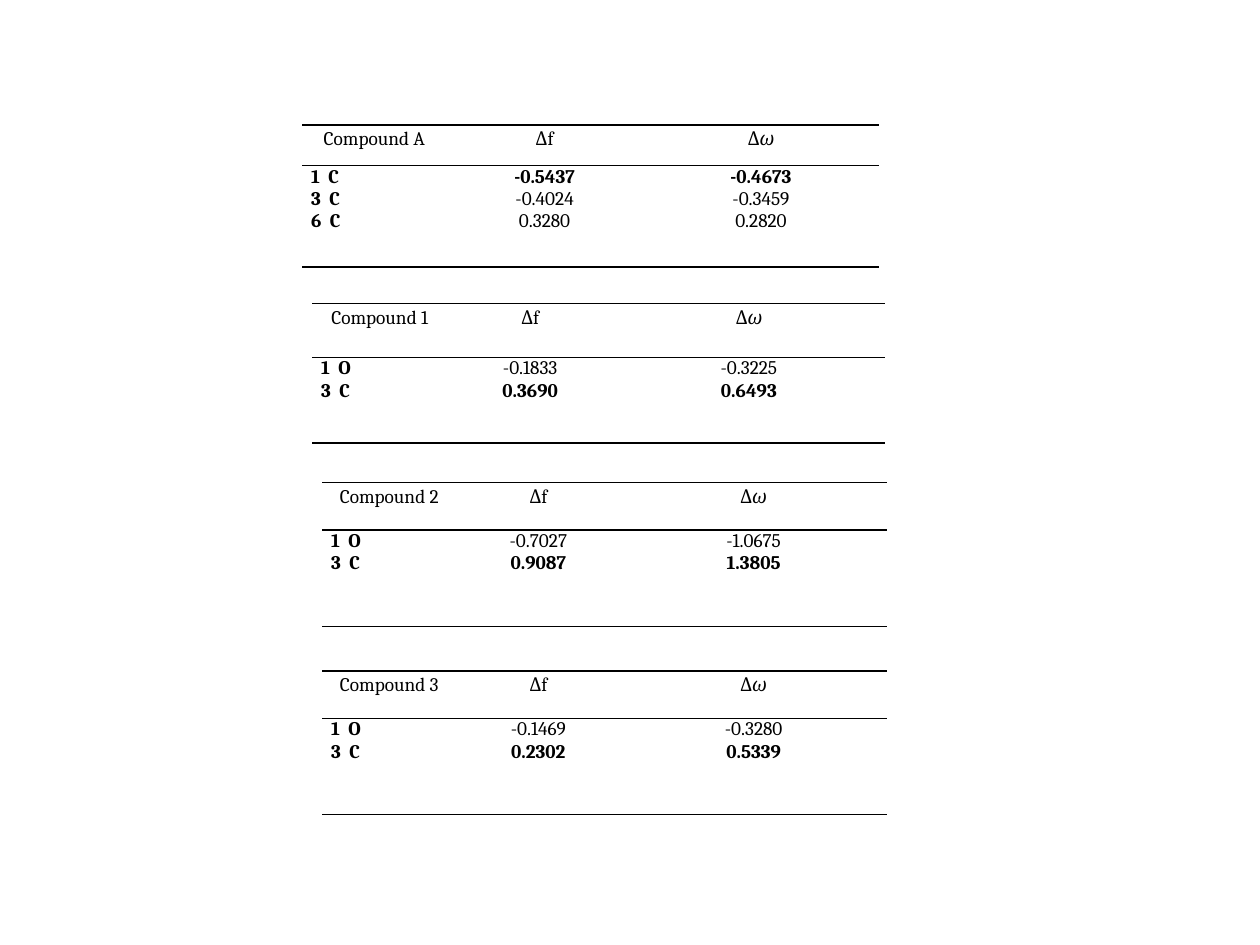
from lxml import etree
from pptx import Presentation
from pptx.dml.color import RGBColor
from pptx.enum import text
from pptx.oxml import ns
from pptx.util import Pt

COLORS = {"ink": "000000", "paper": "FFFFFF"}
FONT, SIZE = "Cambria", 11

# Position, column widths and row heights in points; body rows are
# atom, Δf, Δω; "bold" is the row with the emphasised values
TABLES = [
    dict(name="Compound A", at=(172.8, 71.5), cols=(82.3, 112.3, 135), rows=(23.2, 57.8), bold=0,
         body=[("1  C", "-0.5437", "-0.4673"),
               ("3  C", "-0.4024", "-0.3459"),
               ("6  C", "0.3280", "0.2820")]),
    dict(name="Compound 1", at=(178.5, 173.5), cols=(77, 95, 155), rows=(30.8, 49), bold=1,
         body=[("1  O", "-0.1833", "-0.3225"), ("3  C", "0.3690", "0.6493")]),
    dict(name="Compound 2", at=(184.2, 275.8), cols=(76.5, 94, 152), rows=(27.2, 55), bold=1,
         body=[("1  O", "-0.7027", "-1.0675"), ("3  C", "0.9087", "1.3805")]),
    dict(name="Compound 3", at=(184.2, 383.3), cols=(76.5, 94, 152), rows=(27.2, 55), bold=1,
         body=[("1  O", "-0.1469", "-0.3280"), ("3  C", "0.2302", "0.5339")]),
]


def format_cell(cell):
    """Rule the cell above and below only, and set margins, fill and font."""
    cell.margin_left = cell.margin_right = Pt(5)
    cell.margin_top = cell.margin_bottom = 0
    tc_pr = cell._tc.get_or_add_tcPr()
    for side in ("lnL", "lnR", "lnT", "lnB"):
        ln = etree.SubElement(tc_pr, ns.qn("a:" + side), w=str(Pt(1)))
        if side in ("lnL", "lnR"):
            etree.SubElement(ln, ns.qn("a:noFill"))
        else:
            fill = etree.SubElement(ln, ns.qn("a:solidFill"))
            etree.SubElement(fill, ns.qn("a:srgbClr"), val=COLORS["ink"])
    cell.fill.solid()
    cell.fill.fore_color.rgb = RGBColor.from_string(COLORS["paper"])
    for p in cell.text_frame.paragraphs:
        for r in p.runs:
            r.font.name, r.font.size = FONT, Pt(SIZE)
            r.font.color.rgb = RGBColor.from_string(COLORS["ink"])


prs = Presentation()
prs.slide_width, prs.slide_height = Pt(720), Pt(540)
s = prs.slides.add_slide(prs.slide_layouts[6])

for t in TABLES:
    x, y = t["at"]
    table = s.shapes.add_table(2, 3, Pt(x), Pt(y), Pt(sum(t["cols"])), Pt(sum(t["rows"]))).table
    table.horz_banding = table.first_row = False
    for column, width in zip(table.columns, t["cols"]):
        column.width = Pt(width)
    for row, height in zip(table.rows, t["rows"]):
        row.height = Pt(height)

    # Header row
    for col, parts in enumerate([(t["name"],), ("Δf",), ("Δ", "ω")]):
        cell = table.cell(0, col)
        p = cell.text_frame.paragraphs[0]
        p.alignment, p.line_spacing = text.PP_ALIGN.CENTER, 1.15
        for part in parts:
            r = p.add_run()
            r.text = part
            r.font.bold, r.font.italic = False, part == "ω"
        format_cell(cell)

    # Body row: one paragraph per atom in each cell
    for col, values in enumerate(zip(*t["body"])):
        cell = table.cell(1, col)
        tf = cell.text_frame
        tf.text = "\n".join(values)
        for i, p in enumerate(tf.paragraphs):
            p.alignment = text.PP_ALIGN.CENTER if col else text.PP_ALIGN.LEFT
            p.runs[0].font.bold = col == 0 or i == t["bold"]
        format_cell(cell)

prs.save("out.pptx")
